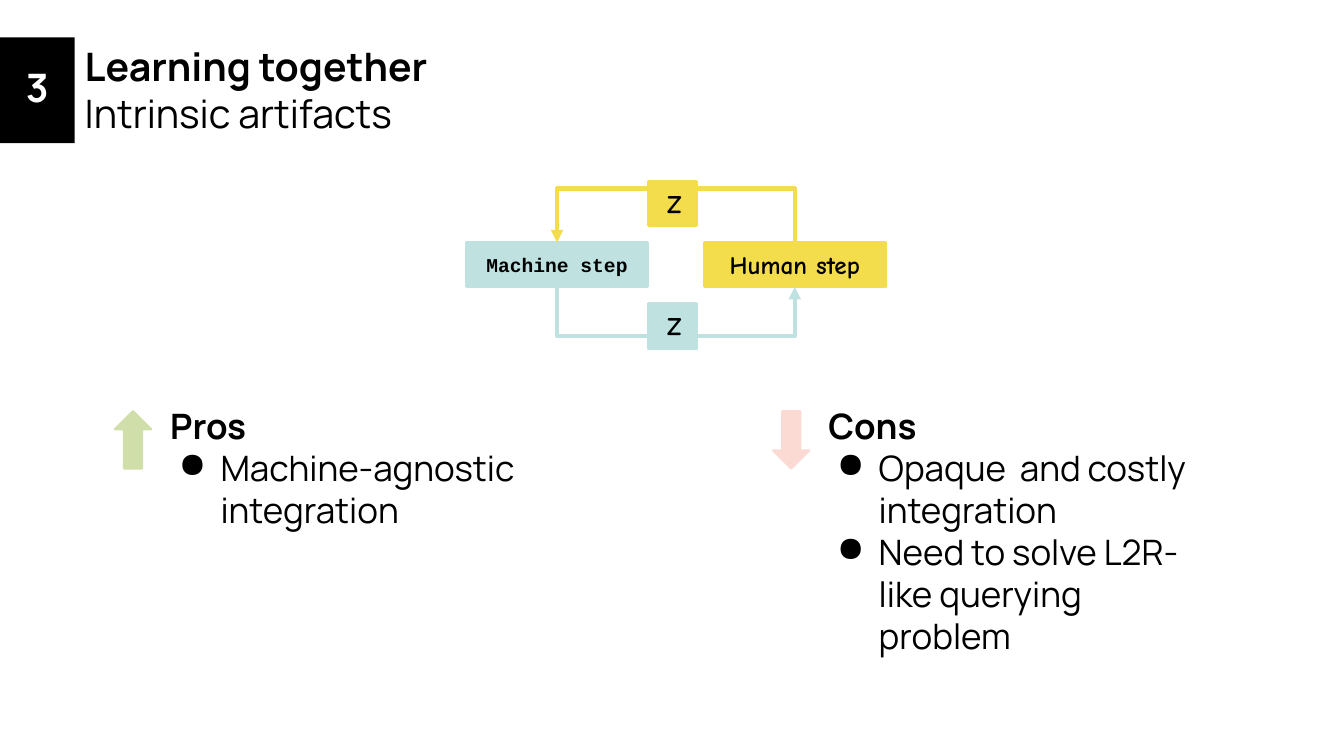
from lxml.etree import SubElement
from pptx import Presentation
from pptx.dml.color import RGBColor
from pptx.enum.shapes import MSO_CONNECTOR as Connector, MSO_SHAPE as Shape
from pptx.enum.text import MSO_ANCHOR as Anchor, MSO_AUTO_SIZE as AutoSize, PP_ALIGN as Align
from pptx.oxml.ns import qn
from pptx.util import Pt

BLACK = RGBColor(0x00, 0x00, 0x00)
WHITE = RGBColor(0xFF, 0xFF, 0xFF)
TEAL = RGBColor(0xBF, 0xE2, 0xE0)
YELLOW = RGBColor(0xF4, 0xDD, 0x4C)
GREEN = RGBColor(0xD0, 0xDE, 0xAA)
PINK = RGBColor(0xFB, 0xDA, 0xD3)

TOP_SITE, BOTTOM_SITE = 0, 2  # connection sites of a rectangle
SLIVER = 0.05  # connector depth between two ends at the same height


def write_line(frame, text, first=False, font="Manrope", size=25, bold=False,
               color=BLACK, align=Align.LEFT, spacing=1.0, bullet=False):
    paragraph = frame.paragraphs[0] if first else frame.add_paragraph()
    paragraph.alignment = align
    paragraph.line_spacing = spacing
    paragraph.space_before = paragraph.space_after = Pt(0)
    if bullet:
        properties = paragraph._p.get_or_add_pPr()
        properties.set("marL", str(Pt(36)))
        properties.set("indent", str(-Pt(30)))
        SubElement(properties, qn("a:buChar")).set("char", "●")
    run = paragraph.add_run()
    run.text = text
    run.font.name, run.font.size, run.font.bold = font, Pt(size), bold
    run.font.color.rgb = color


def set_frame(frame, inset=7.2, anchor=Anchor.TOP):
    frame.word_wrap = True
    frame.auto_size = AutoSize.NONE
    frame.vertical_anchor = anchor
    frame.margin_left = frame.margin_right = Pt(7.2)
    frame.margin_top = frame.margin_bottom = Pt(inset)
    return frame


def add_block(slide, kind, left, top, width, height, fill, line_width=0):
    shape = slide.shapes.add_shape(kind, Pt(left), Pt(top), Pt(width), Pt(height))
    shape.shadow.inherit = False
    shape.fill.solid()
    shape.fill.fore_color.rgb = fill
    if line_width:
        shape.line.color.rgb = fill
        shape.line.width = Pt(line_width)
    else:
        shape.line.fill.background()
    return shape


def add_step(slide, left, top, width, height, fill, text, **text_format):
    shape = add_block(slide, Shape.RECTANGLE, left, top, width, height, fill, 2.25)
    write_line(set_frame(shape.text_frame, anchor=Anchor.MIDDLE), text,
               first=True, bold=True, **text_format)
    return shape


def add_loop(slide, start, end, site, drop, color, arrow):
    """Elbow from start to end, running drop points below (or above) both."""
    connector = slide.shapes.add_connector(Connector.ELBOW, 0, 0, 0, 0)
    connector.begin_connect(start, site)
    connector.end_connect(end, site)
    span = abs(connector.begin_x - connector.end_x)
    middle = (connector.begin_x + connector.end_x) // 2
    level = connector.begin_y
    # A quarter turn makes the elbow leave both steps vertically
    connector.left, connector.top = middle - Pt(SLIVER) // 2, level - span // 2
    connector.width, connector.height = Pt(SLIVER), span
    properties = connector._element.spPr
    transform = properties.find(qn("a:xfrm"))
    transform.set("rot", "5400000")
    for flip in ("flipH", "flipV"):
        transform.attrib.pop(flip, None)
    guide = SubElement(properties.find(qn("a:prstGeom")).find(qn("a:avLst")), qn("a:gd"))
    guide.set("name", "adj1")
    guide.set("fmla", f"val {round(drop / SLIVER * 100000)}")
    connector.line.color.rgb = color
    connector.line.width = Pt(3)
    SubElement(connector.line._get_or_add_ln(), qn(f"a:{arrow}")).set("type", "triangle")
    SubElement(properties, qn("a:effectLst"))


def add_heading(slide, left, top, width, height, number, title, subtitle):
    badge_width = 53.3
    # Title lines
    heading = slide.shapes.title
    heading.left, heading.top = Pt(left + badge_width), Pt(top)
    heading.width, heading.height = Pt(width - badge_width), Pt(height)
    frame = set_frame(heading.text_frame, inset=3.6)
    write_line(frame, title, first=True, size=28, bold=True)
    write_line(frame, subtitle, size=28)
    # Section number
    badge = add_block(slide, Shape.RECTANGLE, left, top, badge_width, height, BLACK)
    write_line(set_frame(badge.text_frame, 3.6, Anchor.MIDDLE), number, first=True,
               size=28, bold=True, color=WHITE, align=Align.CENTER, spacing=0.9)


def add_cycle(slide, left, top, width, height):
    step_width, box_height, token_width = 129, 31.7, 34.6
    step_top = top + (height - box_height) / 2
    # Steps
    machine = add_step(slide, left, step_top, step_width, box_height, TEAL,
                       "Machine step", font="Courier New", size=14, align=Align.CENTER)
    human = add_step(slide, left + width - step_width, step_top, step_width, box_height,
                     YELLOW, "Human step", font="Comic Neue", size=18, align=Align.CENTER)
    # Loops between the steps
    add_loop(slide, human, machine, BOTTOM_SITE, 31, TEAL, "headEnd")
    add_loop(slide, human, machine, TOP_SITE, -34, YELLOW, "tailEnd")
    # Exchanged artifacts
    token_left = left + 129.6
    for token_top, color in ((top, YELLOW), (top + height - box_height, TEAL)):
        add_step(slide, token_left, token_top, token_width, box_height, color,
                 " Z", font="Comic Neue", size=18)


def add_argument(slide, left, top, width, height, color, rotation, title, points):
    arrow_width, text_offset = 25.9, 32.4
    # Direction arrow
    arrow = add_block(slide, Shape.UP_ARROW, left, top + 12.2, arrow_width, 41, color, 1.5)
    arrow.rotation = rotation
    # Title and points
    box = slide.shapes.add_textbox(Pt(left + text_offset), Pt(top),
                                   Pt(width - text_offset), Pt(height))
    frame = set_frame(box.text_frame)
    write_line(frame, title, first=True, bold=True)
    for point in points:
        write_line(frame, point, bullet=True)


def main():
    presentation = Presentation()
    presentation.slide_width, presentation.slide_height = Pt(960), Pt(540)
    slide = presentation.slides.add_slide(presentation.slide_layouts[5])
    add_heading(slide, 0, 26.7, 826, 75.5, "3", "Learning together", "Intrinsic artifacts")
    add_cycle(slide, 333.4, 129.6, 298.8, 119)
    add_argument(slide, 82.1, 281.5, 319.7, 73.4, GREEN, 0, "Pros",
                 ["Machine-agnostic integration"])
    add_argument(slide, 552.2, 281.5, 319.7, 233.3, PINK, 180, "Cons",
                 ["Opaque  and costly integration",
                  "Need to solve L2R-like querying problem"])
    presentation.save("out.pptx")


if __name__ == "__main__":
    main()
